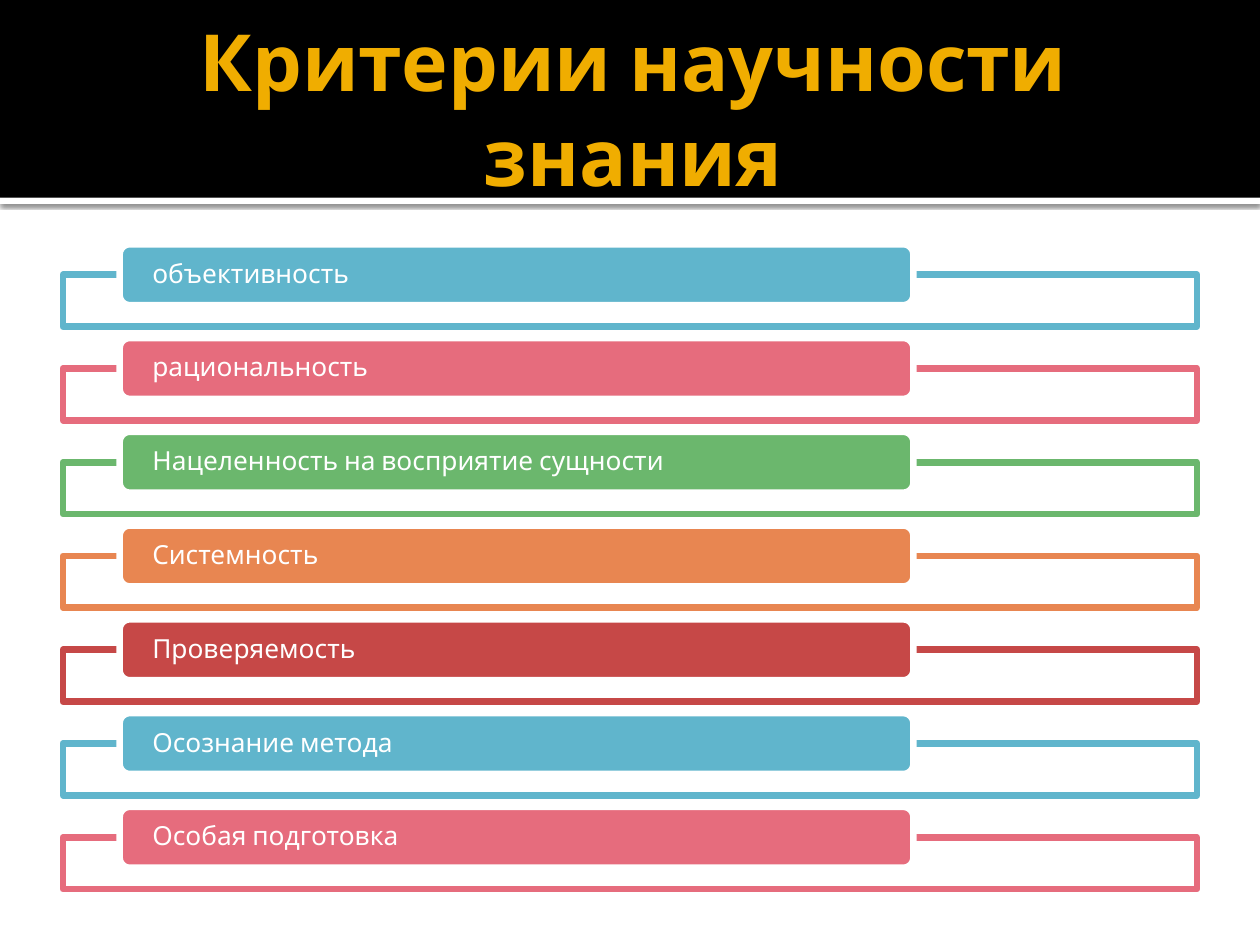
import pptx
import pptx.dml.color
import pptx.enum.shapes
import pptx.enum.text
import pptx.oxml
import pptx.util

Pt = pptx.util.Pt
Shape = pptx.enum.shapes.MSO_SHAPE
Align = pptx.enum.text.PP_ALIGN
Anchor = pptx.enum.text.MSO_ANCHOR
NS = 'xmlns:a="http://schemas.openxmlformats.org/drawingml/2006/main"'

WHITE, BLACK, GOLD = "FFFFFF", "000000", "F0AD00"
BLUE, PINK, GREEN, ORANGE, RED = "60B5CC", "E66C7D", "6BB76D", "E88651", "C64847"

ROWS = [
    ("объективность", BLUE),
    ("рациональность", PINK),
    ("Нацеленность на восприятие сущности", GREEN),
    ("Системность", ORANGE),
    ("Проверяемость", RED),
    ("Осознание метода", BLUE),
    ("Особая подготовка", PINK),
]
TOP, STEP = 139.6, 53.58


def color(code):
    return pptx.dml.color.RGBColor.from_string(code)


class Deck:
    font = "Cabin"
    edge = 3.78

    def __init__(self):
        self.prs = pptx.Presentation()
        self.prs.slide_width, self.prs.slide_height = Pt(720), Pt(540)
        self.slide = self.prs.slides.add_slide(self.prs.slide_layouts[5])

    def letter(self, shape, text, size, ink, align, pads, bold=False):
        """Put styled text into the shape and return its paragraph."""
        frame = shape.text_frame
        frame.text = text
        frame.word_wrap = True
        frame.auto_size = pptx.enum.text.MSO_AUTO_SIZE.NONE
        frame.vertical_anchor = Anchor.MIDDLE
        (frame.margin_left, frame.margin_top,
         frame.margin_right, frame.margin_bottom) = map(Pt, pads)
        para = frame.paragraphs[0]
        para.alignment = align
        font = para.runs[0].font
        font.name, font.size, font.bold = self.font, Pt(size), bold
        font.color.rgb = color(ink)
        return para

    def title(self, text, left, top, width, height):
        shape = self.slide.shapes.title
        shape.left, shape.top = Pt(left), Pt(top)
        shape.width, shape.height = Pt(width), Pt(height)
        self.letter(shape, text, 45, GOLD, Align.CENTER, (7.2, 3.6, 3.6, 3.6), True)
        # Bring the title in front of the header band
        shape.element.getparent().append(shape.element)

    def box(self, left, top, width, height, fill, line=None, kind=Shape.RECTANGLE):
        shape = self.slide.shapes.add_shape(
            kind, Pt(left), Pt(top), Pt(width), Pt(height))
        shape.shadow.inherit = False
        shape.fill.solid()
        shape.fill.fore_color.rgb = color(fill)
        if line:
            shape.line.color.rgb = color(line)
            shape.line.width = Pt(self.edge)
        else:
            shape.line.fill.background()
        return shape

    def shade(self, shape):
        """Give the shape a soft shadow that falls straight down."""
        effects = shape.element.spPr.find(pptx.oxml.ns.qn("a:effectLst"))
        effects.append(pptx.oxml.parse_xml(
            f'<a:outerShdw {NS} blurRad="{Pt(2.5)}" dist="{Pt(0.8)}" dir="5400000">'
            f'<a:srgbClr val="{BLACK}"><a:alpha val="60000"/></a:srgbClr>'
            '</a:outerShdw>'))

    def frame(self, left, top, width, height, line):
        shape = self.box(left, top, width, height, WHITE, line)
        tint = shape.element.spPr.find(".//" + pptx.oxml.ns.qn("a:srgbClr"))
        tint.append(pptx.oxml.parse_xml(f'<a:alpha {NS} val="90000"/>'))

    def label(self, text, left, top, width, height, fill):
        shape = self.box(left, top, width, height, fill, WHITE,
                         Shape.ROUNDED_RECTANGLE)
        para = self.letter(shape, text, 15, WHITE, Align.LEFT, (17, 0, 17, 0))
        para.line_spacing = 0.9


def main():
    deck = Deck()
    deck.shade(deck.box(0, 113, 720, 3.6, WHITE))
    deck.box(0, 0, 720, 113, BLACK)
    deck.title("Критерии научности знания", 36, 12.2, 648, 98.6)
    for i, (text, hue) in enumerate(ROWS):
        top = TOP + i * STEP
        deck.frame(36, top + 17.4, 648, 29.6, hue)
        deck.label(text, 68.4, top, 453.6, 34.8, hue)
    deck.prs.save("out.pptx")


if __name__ == "__main__":
    main()
